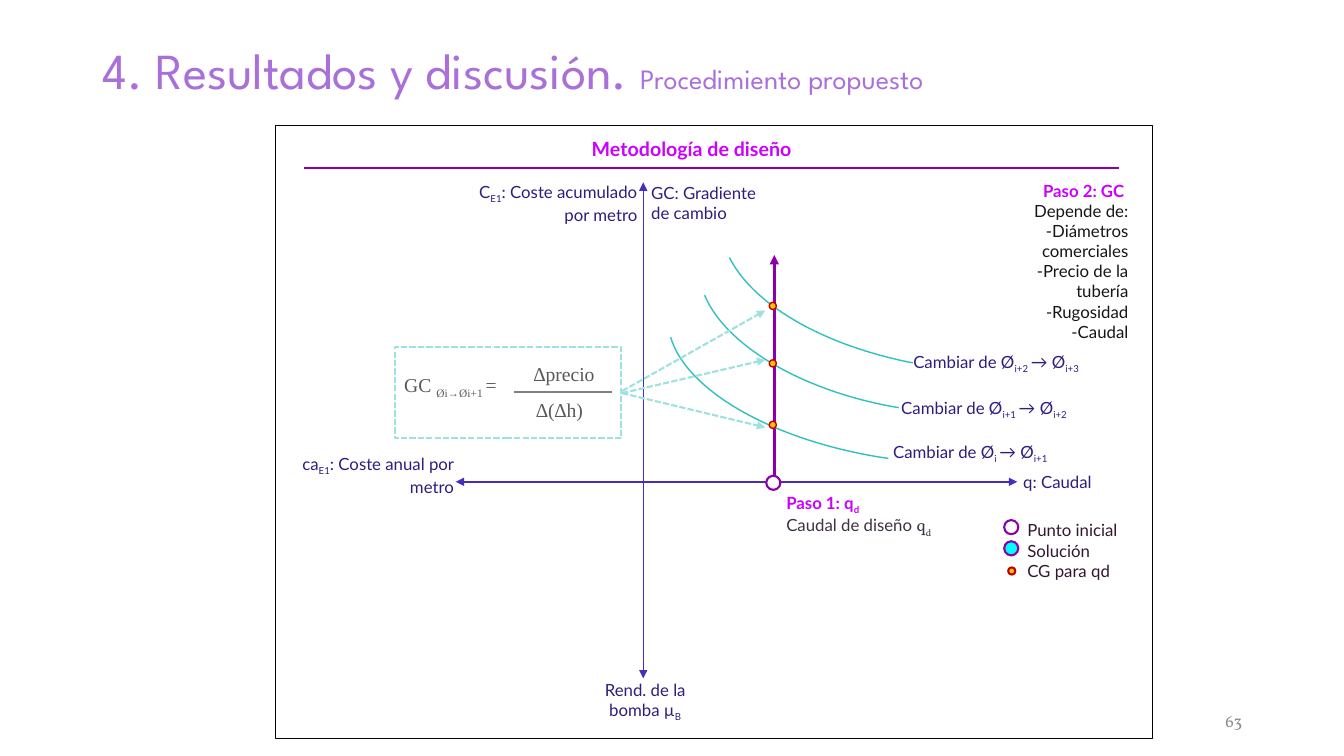
from dataclasses import dataclass

from lxml import etree
from pptx import Presentation
from pptx.dml.color import RGBColor
from pptx.enum.dml import MSO_LINE
from pptx.enum.shapes import MSO_CONNECTOR, MSO_SHAPE
from pptx.enum.text import MSO_ANCHOR, PP_ALIGN
from pptx.oxml.ns import qn
from pptx.util import Pt

PX = 9144  # 100 px to the inch
ARC, OVAL, RECT = MSO_SHAPE.ARC, MSO_SHAPE.OVAL, MSO_SHAPE.RECTANGLE
LINE, DASH = MSO_CONNECTOR.STRAIGHT, MSO_LINE.SQUARE_DOT
TOP, MID = MSO_ANCHOR.TOP, MSO_ANCHOR.MIDDLE
LEFT, MIDDLE, RIGHT = PP_ALIGN.LEFT, PP_ALIGN.CENTER, PP_ALIGN.RIGHT


@dataclass(frozen=True)
class Type:
    face: str
    size: int
    color: str
    bold: bool = False


@dataclass(frozen=True)
class Theme:
    purple: str = "8B00AC"
    axis: str = "482CBC"
    curve: str = "30C1BE"
    pale: str = "9EE2E0"
    gray: str = "808080"
    black: str = "000000"
    white: str = "FFFFFF"
    cyan: str = "00FFFF"
    gold: str = "FFC000"
    red: str = "C00000"
    title: Type = Type("League Spartan", 36, "AA70DA")
    sub: Type = Type("League Spartan", 20, "AA70DA")
    head: Type = Type("Lato", 14, "CC00FF", True)
    step: Type = Type("Lato", 12, "CC00FF", True)
    label: Type = Type("Lato", 12, "301D7E")
    dark: Type = Type("Lato", 12, "19141A")
    flow: Type = Type("Lato", 12, "3F3242")
    serif: Type = Type("Vollkorn", 12, "3F3242")
    key: Type = Type("Lato", 12, "321731")
    math: Type = Type("Times New Roman", 14, "595959")
    page: Type = Type("Vollkorn", 12, "8C8C8C")


class Board:
    def __init__(self, slide, theme):
        self.shapes, self.theme = slide.shapes, theme

    def font(self, font, kind):
        font.name, font.size, font.bold = kind.face, Pt(kind.size), kind.bold
        font.color.rgb = RGBColor.from_string(kind.color)

    def stroke(self, line, color, width, dash=False):
        line.color.rgb = RGBColor.from_string(color)
        line.width = Pt(width)
        if dash:
            line.dash_style = DASH

    def text(self, box, *paras, align=LEFT, anchor=MID, wrap=True, space=None):
        """Each paragraph is a list of (text, type); _x_ marks a subscript."""
        frame = self.shapes.add_textbox(*(n * PX for n in box)).text_frame
        frame.word_wrap, frame.vertical_anchor = wrap, anchor
        for i, parts in enumerate(paras):
            para = frame.add_paragraph() if i else frame.paragraphs[0]
            para.alignment, para.line_spacing = align, space
            base = parts[0][1]
            self.font(para.font, base)
            for words, kind in parts:
                for j, piece in enumerate(words.split("_")):
                    if not piece:
                        continue
                    run = para.add_run()
                    run.text = piece
                    if kind != base:
                        self.font(run.font, kind)
                    if j % 2:
                        run.font._element.set("baseline", "-25000")

    def shape(self, form, box, color, width, fill=None, dash=False):
        shape = self.shapes.add_shape(form, *(n * PX for n in box))
        shape.shadow.inherit = False
        if fill:
            shape.fill.solid()
            shape.fill.fore_color.rgb = RGBColor.from_string(fill)
        else:
            shape.fill.background()
        self.stroke(shape.line, color, width, dash)
        return shape

    def arc(self, box, turn, start, end):
        arc = self.shape(ARC, box, self.theme.curve, 1)
        arc.adjustments[0], arc.adjustments[1] = start, end
        arc.rotation = turn
        frame = arc._element.spPr.find(qn("a:xfrm"))
        frame.set("flipH", "1")
        frame.set("flipV", "1")

    def line(self, ends, color, width, dash=False, tips=()):
        link = self.shapes.add_connector(LINE, *(n * PX for n in ends))
        self.stroke(link.line, color, width, dash)
        for tip in tips:
            etree.SubElement(link.line._ln, qn(f"a:{tip}"), type="triangle")
        etree.SubElement(link._element.spPr, qn("a:effectLst"))


def main():
    deck = Presentation()
    deck.slide_width, deck.slide_height = 1333 * PX, 750 * PX
    t = Theme()
    b = Board(deck.slides.add_slide(deck.slide_layouts[6]), t)
    both, tail = ("headEnd", "tailEnd"), ("tailEnd",)

    # Title
    b.text((92, 0, 1150, 145), [("4. Resultados y discusión. ", t.title),
                                ("Procedimiento propuesto", t.sub)], space=0.9)

    # Design flow arrow and gradient curves
    b.line((768, 484, 768, 253), t.purple, 2.25, tips=tail)
    b.arc((661, 233, 472, 223), 8.2, 162, 212.55)
    b.arc((691, 179, 438, 227), 9.5, 161.96, 210.25)
    b.arc((714, 104, 513, 264), 4.7, 175.82, 210.47)

    # Frame and heading
    b.shape(RECT, (273, 124, 870, 609), t.black, 0.5)
    b.text((577, 120, 285, 55), [("Metodología de diseño", t.head)])
    b.line((302, 167, 1110, 167), t.purple, 1.5)

    # Axes and their labels
    b.line((638, 181, 638, 673), t.axis, 1, tips=both)
    b.line((1009, 478, 452, 478), t.axis, 1, tips=both)
    for box, words, align in (
        ((636, 174, 143, 55), "GC: Gradiente de cambio", LEFT),
        ((1005, 450, 138, 55), "q: Caudal", LEFT),
        ((281, 444, 179, 55), "ca_E1_: Coste anual por metro", RIGHT),
        ((575, 668, 130, 55), "Rend. de la bomba µ_B_", MIDDLE),
        ((455, 174, 187, 55), "C_E1_: Coste acumulado por metro", RIGHT),
    ):
        b.text(box, [(words, t.label)], align=align)

    # Curve labels
    for x, y, old, new in ((876, 422, "i", "i+1"), (884, 378, "i+1", "i+2"),
                           (896, 333, "i+2", "i+3")):
        b.text((x, y, 235, 55), [(f"Cambiar de Ø_{old} _→ Ø_{new}_", t.label)])

    # Steps
    b.text((770, 475, 235, 72), [("Paso 1: q_d_", t.step)],
           [("Caudal de diseño ", t.flow), ("q_d_", t.serif)])
    needs = ("Depende de:", "-Diámetros comerciales", "-Precio de la tubería",
             "-Rugosidad", "-Caudal")
    b.text((991, 174, 138, 166), [("Paso 2: GC ", t.step)],
           *([(need, t.dark)] for need in needs), align=RIGHT, anchor=TOP)

    # Points on the flow line
    b.shape(OVAL, (760, 472, 14, 14), t.purple, 1.5, t.white)
    for y in (418, 357, 300):
        b.shape(OVAL, (763, y, 7, 7), t.red, 1, t.gold)

    # Legend
    b.shape(OVAL, (996, 516, 14, 14), t.purple, 1.5, t.white)
    b.shape(OVAL, (996, 537, 14, 14), t.purple, 1.5, t.cyan)
    b.shape(OVAL, (1000, 563, 7, 7), t.red, 1.5, t.gold)
    names = ("Punto inicial", "Solución", "CG para qd")
    b.text((1009, 506, 131, 80), *([(name, t.key)] for name in names))

    # Gradient formula
    b.shape(RECT, (392, 344, 224, 91), t.pale, 1.5, dash=True)
    b.text((499, 354, 121, 34), [("∆precio", t.math)], align=MIDDLE, anchor=TOP)
    b.text((503, 390, 104, 34), [("∆(∆h)", t.math)], align=MIDDLE, anchor=TOP)
    b.line((510, 389, 607, 389), t.gray, 1)
    b.text((391, 365, 122, 34), [("GC _Øi→Øi+1 _=", t.math)],
           anchor=TOP, wrap=False)
    for start, end in ((390, 357), (390, 424), (388, 308)):
        b.line((617, start, 759, end), t.pale, 1.5, dash=True, tips=tail)

    # Page number
    b.text((942, 695, 300, 40), [("63", t.page)], align=RIGHT)

    deck.save("out.pptx")


if __name__ == "__main__":
    main()
